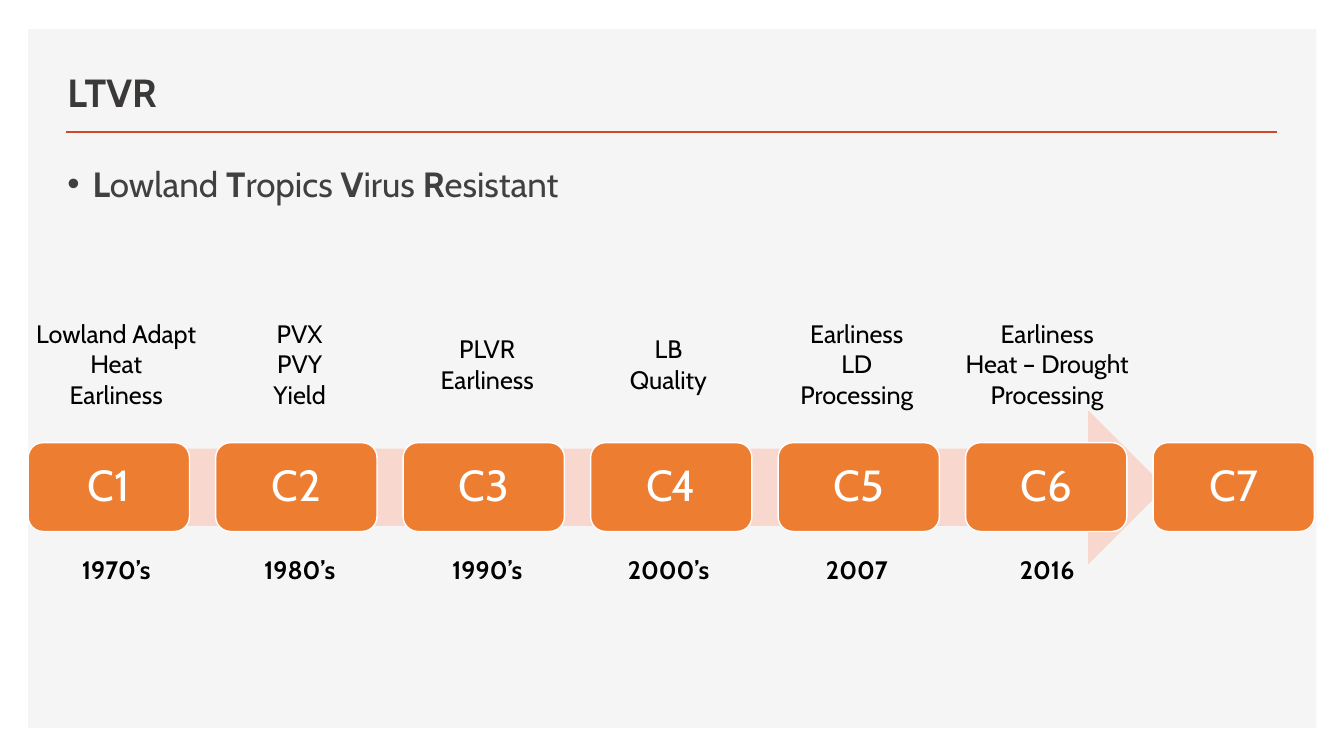
import pptx
import pptx.dml.color
import pptx.enum.shapes
import pptx.enum.text
import pptx.oxml
import pptx.oxml.ns
import pptx.util
from lxml import etree

Pt = pptx.util.Pt
SHAPES = pptx.enum.shapes.MSO_SHAPE
ALIGN = pptx.enum.text.PP_ALIGN
ANCHOR = pptx.enum.text.MSO_ANCHOR

TITLE = "LTVR"
EXPANSION = ["Lowland ", "Tropics ", "Virus ", "Resistant"]
CYCLES = ["C1", "C2", "C3", "C4", "C5", "C6", "C7"]
MILESTONES = [
    (83, ["Lowland Adapt", "Heat", "Earliness"], "1970’s"),
    (214, ["PVX", "PVY", "Yield"], "1980’s"),
    (348, ["PLVR", "Earliness"], "1990’s"),
    (477.5, ["LB", "Quality"], "2000’s"),
    (612, ["Earliness", "LD", "Processing"], "2007"),
    (748, ["Earliness", "Heat – Drought", "Processing"], "2016"),
]
FONT = "Cabin"
CYCLE_LEFT, CYCLE_PITCH = 20.16, 133.92
TRAIT_MIDDLE, LINE_HEIGHT, INSETS = 260, 21.6, 7.2


def color(value):
    return pptx.dml.color.RGBColor.from_string(value)


def style(span, size, shade, bold=False):
    span.font.name = FONT
    span.font.size = Pt(size)
    span.font.bold = bold
    span.font.color.rgb = color(shade)


def add_block(page, kind, left, top, width, height, fill):
    block = page.shapes.add_shape(kind, Pt(left), Pt(top), Pt(width), Pt(height))
    block.shadow.inherit = False
    block.fill.solid()
    block.fill.fore_color.rgb = color(fill)
    block.line.fill.background()
    return block


def add_box(page, left, top, width, height):
    box = page.shapes.add_textbox(Pt(left), Pt(top), Pt(width), Pt(height))
    box.text_frame.word_wrap = True
    return box.text_frame


def add_label(page, center, top, width, height, lines, bold=False):
    frame = add_box(page, center - width / 2, top, width, height)
    frame.text = "\n".join(lines)
    for para in frame.paragraphs:
        para.alignment = ALIGN.CENTER
        style(para.runs[0], 18, "000000", bold)


def add_title(page):
    title = page.shapes.title
    title.left, title.top, title.width, title.height = Pt(41), Pt(35.3), Pt(541.5), Pt(50.4)
    frame = title.text_frame
    frame.text = TITLE
    frame.word_wrap = True
    frame.auto_size = pptx.enum.text.MSO_AUTO_SIZE.NONE
    frame.vertical_anchor = ANCHOR.BOTTOM
    frame.paragraphs[0].alignment = ALIGN.LEFT
    style(frame.paragraphs[0].runs[0], 28, "3B3838", True)

    panel = add_block(page, SHAPES.RECTANGLE, 20.16, 20.9, 920.2, 499, "F5F5F5")
    title.element.addprevious(panel.element)

    rule = page.shapes.add_connector(
        pptx.enum.shapes.MSO_CONNECTOR.STRAIGHT, Pt(47.5), Pt(94.3), Pt(912.2), Pt(94.3))
    rule.line.color.rgb = color("D24726")
    rule.line.width = Pt(2)
    etree.SubElement(rule.element.spPr, pptx.oxml.ns.qn("a:effectLst"))


def add_expansion(page):
    para = add_box(page, 41, 112.3, 632.9, 314.6).paragraphs[0]
    para.alignment = ALIGN.JUSTIFY
    para.space_before, para.space_after = Pt(10), Pt(6)
    for word in EXPANSION:
        for text, bold in ((word[0], True), (word[1:], False)):
            span = para.add_run()
            span.text = text
            style(span, 25, "404040", bold)
    properties = para.runs[0].font.fill and para._p.get_or_add_pPr()
    properties.set("marL", str(Pt(18)))
    properties.set("indent", str(Pt(-18)))
    font = etree.SubElement(properties, pptx.oxml.ns.qn("a:buFont"))
    font.set("typeface", "Arial")
    bullet = etree.SubElement(properties, pptx.oxml.ns.qn("a:buChar"))
    bullet.set("char", "•")


def add_cycles(page):
    add_block(page, SHAPES.RIGHT_ARROW, 126, 293, 706.3, 110.2, "F8D7CE")
    for index, name in enumerate(CYCLES):
        left = CYCLE_LEFT + index * CYCLE_PITCH
        cycle = add_block(page, SHAPES.ROUNDED_RECTANGLE, left, 316.2, 115.2, 63.4, "ED7D31")
        cycle.line.color.rgb = color("FFFFFF")
        cycle.line.width = Pt(1)
        frame = cycle.text_frame
        frame.text = name
        frame.vertical_anchor = ANCHOR.MIDDLE
        para = frame.paragraphs[0]
        para.alignment = ALIGN.CENTER
        para.line_spacing = 0.9
        style(para.runs[0], 31, "FFFFFF")


def add_milestones(page):
    for center, traits, year in MILESTONES:
        height = len(traits) * LINE_HEIGHT + INSETS
        add_label(page, center, TRAIT_MIDDLE - height / 2, 148.3, height, traits)
        add_label(page, center, 392.4, 101.5, 28.8, [year], True)


def main():
    deck = pptx.Presentation()
    deck.slide_width, deck.slide_height = Pt(960), Pt(540)
    page = deck.slides.add_slide(deck.slide_layouts[5])
    add_title(page)
    add_expansion(page)
    add_cycles(page)
    add_milestones(page)
    deck.save("out.pptx")


if __name__ == "__main__":
    main()
